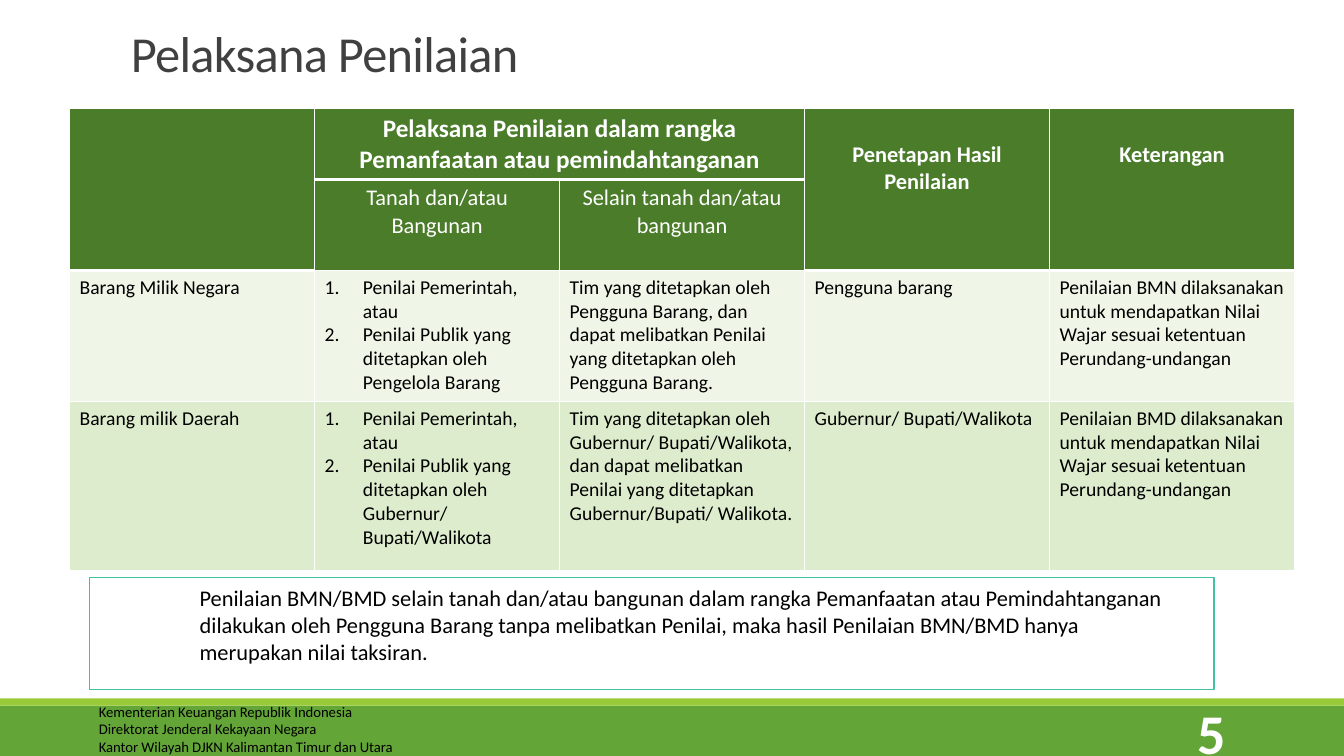
import pptx
import pptx.util
import pptx.dml.color
import pptx.enum.shapes
import pptx.enum.text
import pptx.oxml.ns
from lxml import etree

Inches = pptx.util.Inches
ALIGN = pptx.enum.text.PP_ALIGN
ANCHOR = pptx.enum.text.MSO_ANCHOR
RECTANGLE = pptx.enum.shapes.MSO_SHAPE.RECTANGLE

FONT = "Calibri"
GREEN, LIME, HEADER = "63A537", "99CB38", "4A7C29"
WHITE, BLACK, GREY, TEAL = "FFFFFF", "000000", "404040", "44C1A3"

TITLE = "Pelaksana Penilaian"
PAGE_NUMBER = "5"
FOOTER = [
    "Kementerian Keuangan Republik Indonesia",
    "Direktorat Jenderal Kekayaan Negara",
    "Kantor Wilayah DJKN Kalimantan Timur dan Utara",
]
NOTE = ("Penilaian BMN/BMD selain tanah dan/atau bangunan dalam rangka Pemanfaatan "
        "atau Pemindahtanganan dilakukan oleh Pengguna Barang tanpa melibatkan Penilai, "
        "maka hasil Penilaian BMN/BMD hanya merupakan nilai taksiran.")

# Each cell is a list of paragraphs; None is covered by a merged cell.
ROWS = [
    [[], ["Pelaksana Penilaian dalam rangka Pemanfaatan atau pemindahtanganan"], None,
     ["Penetapan Hasil Penilaian"], ["Keterangan"]],
    [None, ["Tanah dan/atau Bangunan"], ["Selain tanah dan/atau bangunan"], None, None],
    [["Barang Milik Negara"],
     ["Penilai Pemerintah, atau",
      "Penilai Publik yang ditetapkan oleh Pengelola Barang"],
     ["Tim yang ditetapkan oleh Pengguna Barang, dan dapat melibatkan Penilai "
      "yang ditetapkan oleh Pengguna Barang."],
     ["Pengguna barang"],
     ["Penilaian BMN dilaksanakan untuk mendapatkan Nilai Wajar sesuai ketentuan "
      "Perundang-undangan"]],
    [["Barang milik Daerah"],
     ["Penilai Pemerintah, atau",
      "Penilai Publik yang ditetapkan oleh Gubernur/ Bupati/Walikota"],
     ["Tim yang ditetapkan oleh Gubernur/ Bupati/Walikota, dan dapat melibatkan Penilai "
      "yang ditetapkan Gubernur/Bupati/ Walikota."],
     ["Gubernur/ Bupati/Walikota"],
     ["Penilaian BMD dilaksanakan untuk mendapatkan Nilai Wajar sesuai ketentuan "
      "Perundang-undangan"]],
]
ROW_HEIGHTS = [0.7, 0.89, 1.3, 1.68]
ROW_FILLS = [HEADER, HEADER, "EFF6E8", "DEECCE"]
COLUMN_WIDTH = 2.43
MERGES = [((0, 0), (1, 0)), ((0, 1), (0, 2)), ((0, 3), (1, 3)), ((0, 4), (1, 4))]
SPLIT_COLUMNS = (1, 2)
LIST_COLUMN = 1


def color(hex_code):
    return pptx.dml.color.RGBColor.from_string(hex_code)


def paint(fill, hex_code):
    fill.solid()
    fill.fore_color.rgb = color(hex_code)


def add_child(parent, tag, **attributes):
    child = etree.SubElement(parent, pptx.oxml.ns.qn(tag))
    for name, value in attributes.items():
        child.set(name, str(value))
    return child


def write(frame, lines, size, hex_code, bold=False, align=ALIGN.LEFT, numbered=False):
    frame.word_wrap = True
    for index, line in enumerate(lines):
        para = frame.paragraphs[0] if index == 0 else frame.add_paragraph()
        para.alignment = align
        if numbered:
            properties = para._p.get_or_add_pPr()
            properties.set("marL", str(Inches(0.38)))
            properties.set("indent", str(-Inches(0.38)))
            add_child(properties, "a:buFont", typeface="+mj-lt")
            add_child(properties, "a:buAutoNum", type="arabicPeriod")
        span = para.add_run()
        span.text = line
        font_format = {"name": FONT, "size": pptx.util.Pt(size), "bold": bold}
        for name, value in font_format.items():
            setattr(span.font, name, value)
        span.font.color.rgb = color(hex_code)


def add_text(shapes, place, lines, size, hex_code, frame_format=None, **style):
    box = shapes.add_textbox(*map(Inches, place))
    for name, value in (frame_format or {}).items():
        setattr(box.text_frame, name, value)
    write(box.text_frame, lines, size, hex_code, **style)
    return box


def add_box(shapes, place, fill):
    box = shapes.add_shape(RECTANGLE, *map(Inches, place))
    box.shadow.inherit = False
    paint(box.fill, fill)
    box.line.fill.background()
    return box


def add_borders(cell, row, column):
    """White rules, thicker below the header cells."""
    above_heavy = row == 1 or (row == 2 and column not in SPLIT_COLUMNS)
    widths = {"a:lnL": 1, "a:lnR": 1, "a:lnT": 3 if above_heavy else 1,
              "a:lnB": 3 if row == 0 else 1}
    for tag, width in widths.items():
        line = add_child(cell._tc.get_or_add_tcPr(), tag, w=pptx.util.Pt(width))
        add_child(add_child(line, "a:solidFill"), "a:srgbClr", val=WHITE)


def add_appraisal_table(page):
    place = (0.69, 1.08, COLUMN_WIDTH * len(ROWS[0]), sum(ROW_HEIGHTS))
    table = page.shapes.add_table(len(ROWS), len(ROWS[0]), *map(Inches, place)).table
    table.first_row = table.horz_banding = False
    for column in table.columns:
        column.width = Inches(COLUMN_WIDTH)
    for row, height in zip(table.rows, ROW_HEIGHTS):
        row.height = Inches(height)
    for first, last in MERGES:
        table.cell(*first).merge(table.cell(*last))

    for row, contents in enumerate(ROWS):
        for column, lines in enumerate(contents):
            if lines is None:
                continue
            cell = table.cell(row, column)
            add_borders(cell, row, column)
            paint(cell.fill, ROW_FILLS[row])
            if row < 2:
                if row == 0 and column not in SPLIT_COLUMNS:
                    cell.margin_top = Inches(0.32)
                size = 18 if row == 0 and column in SPLIT_COLUMNS else 16
                write(cell.text_frame, lines, size, WHITE, bold=row == 0, align=ALIGN.CENTER)
            else:
                write(cell.text_frame, lines, 14, BLACK, numbered=column == LIST_COLUMN)


def add_note(page):
    group = page.shapes.add_group_shape()
    frame = add_box(group.shapes, (0.89, 5.73, 11.15, 1.11), WHITE)
    frame.line.color.rgb = color(TEAL)
    frame.line.width = pptx.util.Pt(1)
    fill_color = frame._element.spPr.find(".//" + pptx.oxml.ns.qn("a:srgbClr"))
    add_child(fill_color, "a:alpha", val=40000)
    margins = {"margin_left": Inches(1.09), "margin_top": Inches(0.07),
               "margin_right": Inches(0.07), "margin_bottom": Inches(0.07)}
    add_text(group.shapes, (0.89, 5.73, 10.88, 0.97), [NOTE], 16, BLACK, margins)


def main():
    deck = pptx.Presentation()
    deck.slide_width, deck.slide_height = Inches(13.33), Inches(7.5)
    page = deck.slides.add_slide(deck.slide_layouts[6])

    add_box(page.shapes, (0, 7, 13.33, 0.5), GREEN)
    add_box(page.shapes, (0, 6.93, 13.33, 0.07), LIME)

    title = add_text(page.shapes, (1.2, 0.31, 9.43, 0.56), [TITLE], 36, GREY,
                     {"vertical_anchor": ANCHOR.BOTTOM})
    para = title.text_frame.paragraphs[0]
    para.line_spacing = 0.85
    para.runs[0]._r.get_or_add_rPr().set("spc", "-50")

    add_text(page.shapes, (10.83, 7.06, 1.43, 0.4), [PAGE_NUMBER], 40, WHITE,
             {"vertical_anchor": ANCHOR.MIDDLE}, bold=True, align=ALIGN.RIGHT)
    add_text(page.shapes, (0.39, 6.92, 6.67, 0.63), FOOTER, 10.5, BLACK,
             {"margin_left": Inches(0.59)})
    add_appraisal_table(page)
    add_note(page)
    deck.save("out.pptx")


if __name__ == "__main__":
    main()
